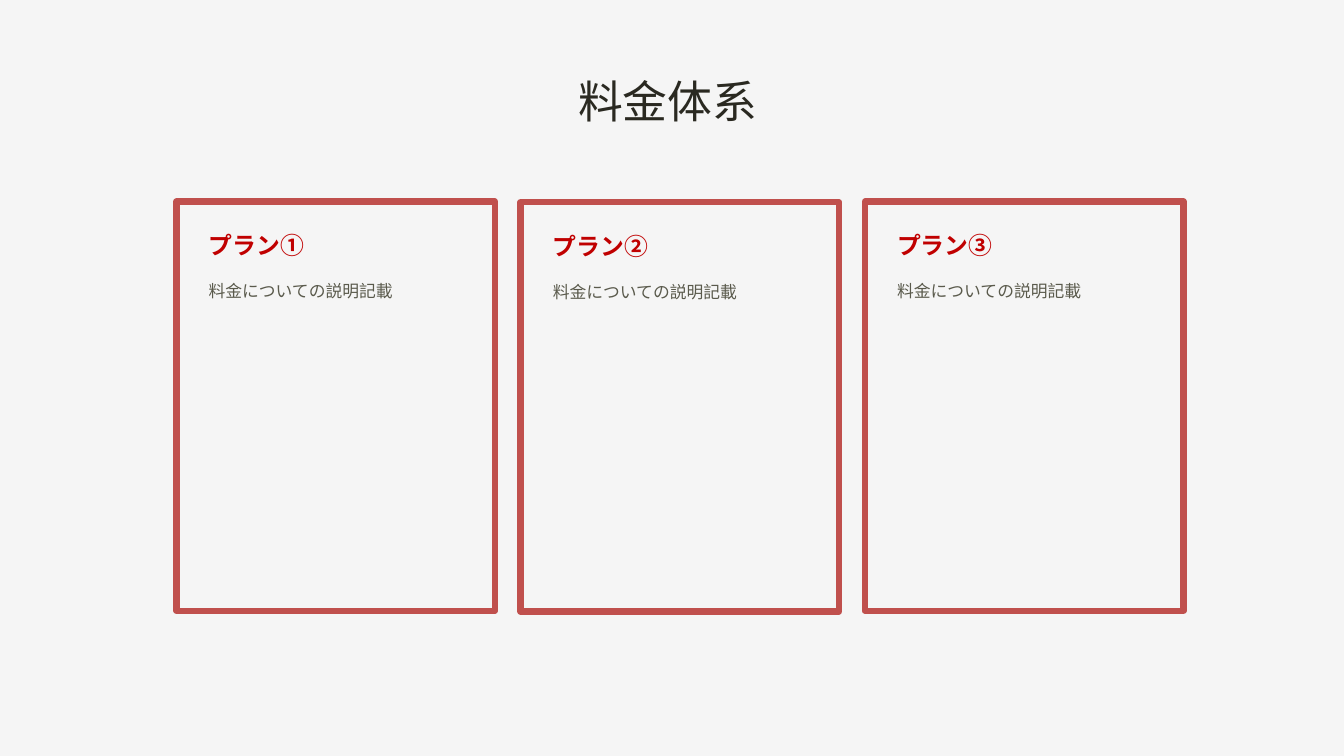
import dataclasses

import lxml.etree
import pptx
import pptx.dml.color
import pptx.enum.shapes
import pptx.enum.text
import pptx.oxml.ns
import pptx.util

Pt = pptx.util.Pt
Align = pptx.enum.text.PP_ALIGN


@dataclasses.dataclass(frozen=True)
class Theme:
    font: str = "Noto Sans CJK JP"
    background: str = "F5F5F5"
    border: str = "C0504D"
    border_width: float = 4.5
    # Text styles: size, line spacing, colour, bold
    title: tuple = (32, 27.4, "2A2921", False)
    plan: tuple = (17, 20.8, "C00000", True)
    description: tuple = (12, 16.8, "5A5A4C", False)


THEME = Theme()

PLANS = [
    ("プラン①", "料金についての説明記載"),
    ("プラン②", "料金についての説明記載"),
    ("プラン③", "料金についての説明記載"),
]
CARD_LEFT, CARD_TOP, CARD_STEP = 126, 144, 245.9
CARD_WIDTH, CARD_HEIGHT = 227.5, 292.3
TEXT_INSET = 23


def color(value):
    return pptx.dml.color.RGBColor.from_string(value)


def apply(target, formats):
    for name, value in formats.items():
        setattr(target, name, value)


def place(box, left, top, width, height):
    apply(box, {"left": Pt(left), "top": Pt(top),
                "width": Pt(width), "height": Pt(height)})


def write(box, text, style, alignment=Align.LEFT):
    """Fill a box with one styled paragraph and no inner margins."""
    size, spacing, text_color, bold = style
    frame = box.text_frame
    apply(frame, {
        "word_wrap": True,
        "auto_size": pptx.enum.text.MSO_AUTO_SIZE.NONE,
        "vertical_anchor": pptx.enum.text.MSO_ANCHOR.TOP,
        "margin_left": 0, "margin_right": 0,
        "margin_top": 0, "margin_bottom": 0,
    })
    para = frame.paragraphs[0]
    apply(para, {"alignment": alignment, "line_spacing": Pt(spacing),
                 "space_after": Pt(6)})
    span = para.add_run()
    span.text = text
    apply(span.font, {"size": Pt(size), "bold": bold, "name": THEME.font})
    span.font.color.rgb = color(text_color)
    # Japanese glyphs take their typeface from the East Asian font entry
    east_asian = lxml.etree.SubElement(
        span.font._element, pptx.oxml.ns.qn("a:ea"))
    east_asian.set("typeface", THEME.font)


def add_text(page, text, style, left, top, width, height):
    box = page.shapes.add_textbox(0, 0, 0, 0)
    place(box, left, top, width, height)
    write(box, text, style)


def add_frame(page, left, top):
    frame = page.shapes.add_shape(
        pptx.enum.shapes.MSO_SHAPE.RECTANGLE,
        Pt(left), Pt(top), Pt(CARD_WIDTH), Pt(CARD_HEIGHT))
    frame.shadow.inherit = False
    frame.fill.background()
    frame.line.color.rgb = color(THEME.border)
    frame.line.width = Pt(THEME.border_width)


def add_plan(page, plan, description, left, top):
    text_left = left + TEXT_INSET
    add_text(page, plan, THEME.plan, text_left, top + 20.3, 210, 14)
    add_text(page, description, THEME.description,
             text_left, top + 54, 193, 216)
    add_frame(page, left, top)


def main():
    deck = pptx.Presentation()
    apply(deck, {"slide_width": Pt(960), "slide_height": Pt(540)})
    page = deck.slides.add_slide(deck.slide_layouts.get_by_name("Title Only"))
    page.background.fill.solid()
    page.background.fill.fore_color.rgb = color(THEME.background)

    title = page.shapes.title
    place(title, 372, 63.4, 210, 17.3)
    write(title, "料金体系", THEME.title, Align.CENTER)
    for index, (plan, description) in enumerate(PLANS):
        # The middle card sits slightly lower
        top = CARD_TOP + (0.5 if index == 1 else 0)
        add_plan(page, plan, description, CARD_LEFT + index * CARD_STEP, top)
    deck.save("out.pptx")


if __name__ == "__main__":
    main()
